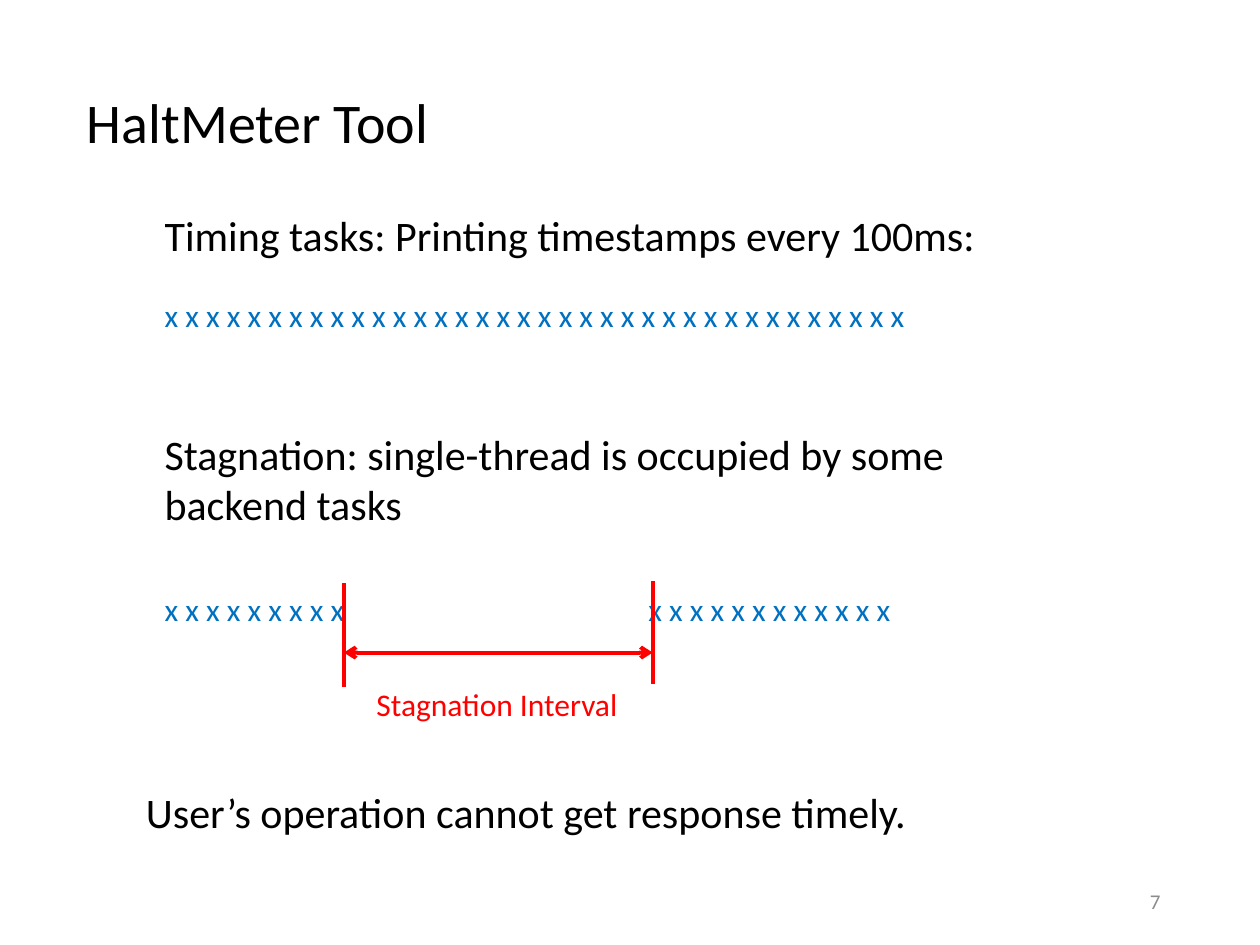
import dataclasses

import pptx
import pptx.dml.color
import pptx.enum.shapes
import pptx.enum.text
import pptx.oxml
import pptx.oxml.ns
import pptx.util

Pt = pptx.util.Pt
ALIGN = pptx.enum.text.PP_ALIGN
ANCHOR = pptx.enum.text.MSO_ANCHOR


@dataclasses.dataclass(frozen=True)
class Theme:
    font: str = "Calibri"
    ink: str = "000000"
    ticks: str = "0070C0"
    alert: str = "FF0000"
    muted: str = "8C8C8C"
    title: int = 32
    body: int = 24
    label: int = 18
    number: int = 12
    line: float = 2.25


THEME = Theme()


def rgb(value):
    return pptx.dml.color.RGBColor.from_string(value)


def write(sp, text, size=THEME.body, color=THEME.ink, align=ALIGN.LEFT,
          anchor=ANCHOR.TOP, wrap=True):
    """Fill a text box or placeholder with one formatted paragraph."""
    tf = sp.text_frame
    tf.auto_size = pptx.enum.text.MSO_AUTO_SIZE.NONE
    tf.word_wrap = wrap
    tf.vertical_anchor = anchor
    p = tf.paragraphs[0]
    p.alignment = align
    r = p.add_run()
    r.text = text
    r.font.name = THEME.font
    r.font.size = Pt(size)
    r.font.color.rgb = rgb(color)
    return p


def add_text(s, box, text, **fmt):
    sp = s.shapes.add_textbox(*(Pt(v) for v in box))
    return write(sp, text, **fmt)


def add_tab_stop(p, pos):
    tabs = pptx.oxml.parse_xml(
        f'<a:tabLst {pptx.oxml.ns.nsdecls("a")}>'
        f'<a:tab pos="{int(Pt(pos))}" algn="l"/></a:tabLst>')
    p._p.get_or_add_pPr().append(tabs)


def add_line(s, x1, y1, x2, y2, arrows=False):
    cn = s.shapes.add_connector(
        pptx.enum.shapes.MSO_CONNECTOR.STRAIGHT, Pt(x1), Pt(y1), Pt(x2), Pt(y2))
    cn.line.color.rgb = rgb(THEME.alert)
    cn.line.width = Pt(THEME.line)
    ns = pptx.oxml.ns.nsdecls("a")
    if arrows:
        ln = cn.line._get_or_add_ln()
        for end in ("headEnd", "tailEnd"):
            ln.append(pptx.oxml.parse_xml(f'<a:{end} {ns} type="arrow"/>'))
    cn._element.spPr.append(pptx.oxml.parse_xml(f"<a:effectLst {ns}/>"))


def tick_row(count):
    return " ".join("x" * count)


def place_title(s, box, text):
    sp = s.shapes.title
    sp.left, sp.top, sp.width, sp.height = (Pt(v) for v in box)
    write(sp, text, size=THEME.title)


def timing_section(s, box):
    """Heading above an unbroken row of timestamps."""
    x, y, w, h = box
    add_text(s, (x, y, w, 36), "Timing tasks: Printing timestamps every 100ms:",
             wrap=False)
    add_text(s, (x, y + 49.6, w, 29), tick_row(36),
             size=THEME.label, color=THEME.ticks)


def stagnation_section(s, box):
    """Heading above a row of timestamps with a marked gap."""
    x, y, w, h = box
    add_text(s, (x, y, w, 66),
             "Stagnation: single-thread is occupied by some backend tasks")

    # Timestamps before and after the gap
    row = y + 92.2
    p = add_text(s, (x, row, w, 29), f"{tick_row(9)}\t{tick_row(12)}",
                 size=THEME.label, color=THEME.ticks)
    add_tab_stop(p, 276.5)

    # Interval limits, span arrow and label
    start, end = x + 109.5, x + 286
    for limit, top in ((start, row), (end, row - 1.5)):
        add_line(s, limit, top, limit, top + 59)
    add_line(s, start, row + 39.5, end, row + 39.5, arrows=True)
    add_text(s, (start + 11.5, row + 54.7, 154, 29), "Stagnation Interval",
             size=THEME.label, color=THEME.alert, wrap=False)


def main():
    prs = pptx.Presentation()
    prs.slide_width, prs.slide_height = Pt(720), Pt(540)
    s = prs.slides.add_slide(prs.slide_layouts[5])

    place_title(s, (42.5, 46.5, 677, 69), "HaltMeter Tool")
    timing_section(s, (87, 116, 488, 79))
    stagnation_section(s, (87, 241.2, 482, 176))

    # Conclusion and slide number
    add_text(s, (76.3, 445.7, 454, 36),
             "User’s operation cannot get response timely.", wrap=False)
    add_text(s, (508.3, 500.5, 162, 29), "7", size=THEME.number,
             color=THEME.muted, align=ALIGN.RIGHT, anchor=ANCHOR.MIDDLE)

    prs.save("out.pptx")


if __name__ == "__main__":
    main()
